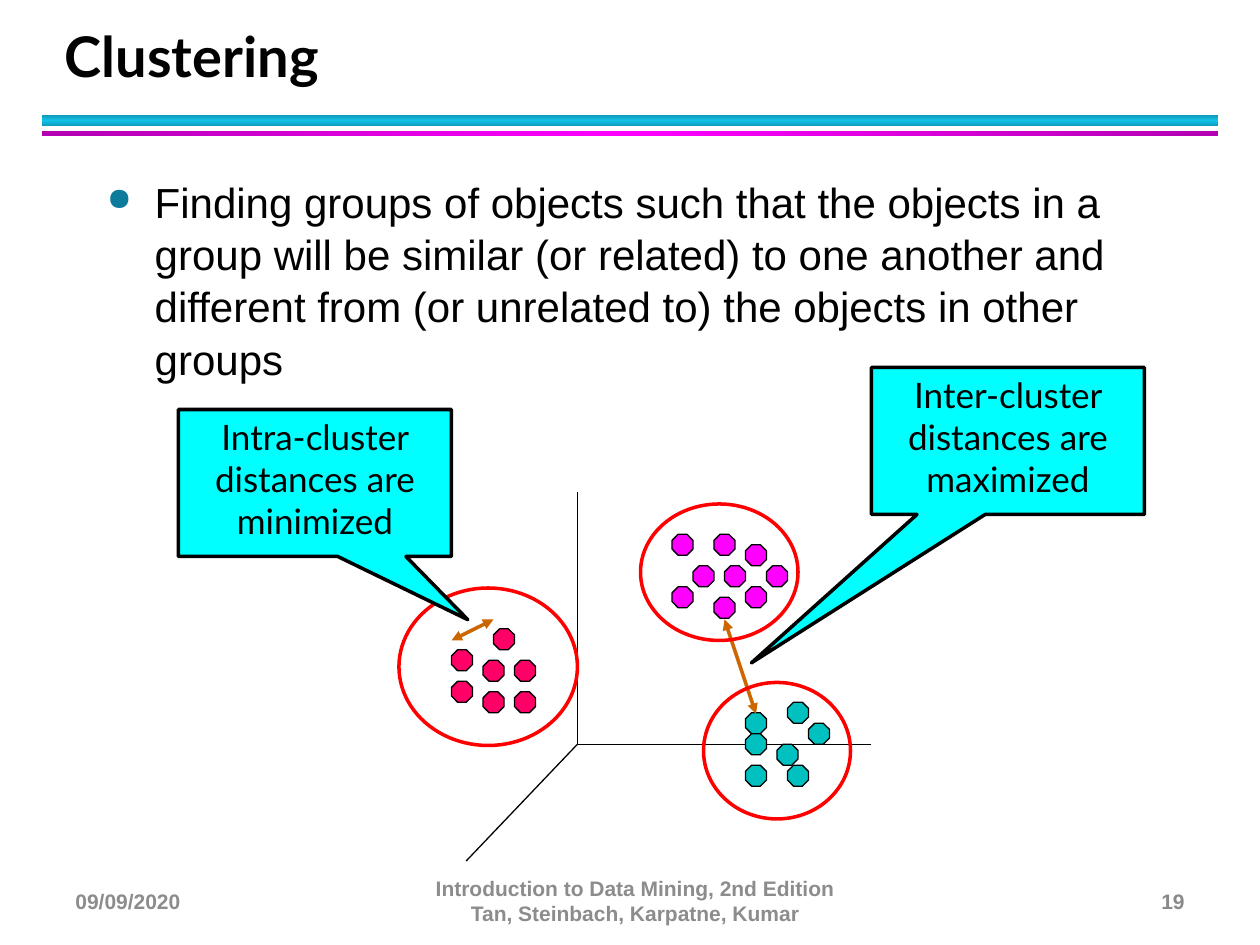
from copy import deepcopy
from dataclasses import dataclass

from lxml import etree
from pptx import Presentation
from pptx import util as u
from pptx.dml.color import RGBColor
from pptx.enum import shapes, text
from pptx.oxml.ns import qn

COLUMNS, ROWS = 120, 90
WIDTH, HEIGHT = u.Inches(10), u.Inches(7.5)
PLOT_SHIFT = -0.12  # rows by which the axes and dots sit above the grid


@dataclass(frozen=True)
class Theme:
    heading: str = "Lato"
    body: str = "Arial"
    title_size: int = 32
    body_size: int = 24
    callout_size: int = 20
    footer_size: int = 12
    ink: str = "000000"
    date_grey: str = "8C8C8C"
    number_grey: str = "898989"
    bullet: str = "0C7B9C"
    callout: str = "00FFFF"
    ring: str = "FF0000"
    arrow: str = "CC6600"
    cyan_bar: tuple = ("0E9BBA", "12C2E9")
    magenta_bar: tuple = ("B200B2", "FF00FF")
    clusters: tuple = ("FF00FF", "FF0066", "00C0C0")
    thin: float = 0.75
    thick: float = 2


THEME = Theme()

# Top-left grid cells of the dots, one list for each cluster
CLUSTER_DOTS = (
    [(64, 51), (68, 51), (71, 52), (66, 54), (69, 54), (73, 54),
     (64, 56), (71, 56), (68, 57)],
    [(47, 60), (43, 62), (46, 63), (49, 63), (43, 65), (46, 66), (49, 66)],
    [(71, 68), (75, 67), (77, 69), (71, 70), (74, 71), (71, 73), (75, 73)],
)
RINGS = [(38, 56, 17, 15), (61, 48, 15, 13), (67, 65, 14, 13)]


def across(columns):
    return round(WIDTH * columns / COLUMNS)


def down(rows):
    return round(HEIGHT * rows / ROWS)


def place(cell):
    left, top, width, height = cell
    return across(left), down(top), across(width), down(height)


def color(value):
    return RGBColor.from_string(value)


def assign(target, **values):
    for name, value in values.items():
        setattr(target, name, value)


def write(frame, words, font, size, ink=THEME.ink, bold=False, **layout):
    """Fill a text frame with one paragraph and return that paragraph."""
    assign(frame, word_wrap=True, **layout)
    para = frame.paragraphs[0]
    para.text = words
    for span in para.runs:
        assign(span.font, name=font, size=u.Pt(size), bold=bold)
        span.font.color.rgb = color(ink)
    return para


def add_text(page, cell, words, font, size, **style):
    box = page.shapes.add_textbox(*place(cell))
    return write(box.text_frame, words, font, size, **style)


def add_shape(page, kind, cell, fill=None, line=None, weight=THEME.thin):
    shape = page.shapes.add_shape(kind, *place(cell))
    shape.shadow.inherit = False
    if fill:
        shape.fill.solid()
        shape.fill.fore_color.rgb = color(fill)
    else:
        shape.fill.background()
    if line:
        shape.line.color.rgb = color(line)
        shape.line.width = u.Pt(weight)
    else:
        shape.line.fill.background()
    return shape


def add_bar(page, cell, edge, middle, angle):
    """Draw a bar shaded from edge to middle and back to edge."""
    bar = add_shape(page, shapes.MSO_SHAPE.RECTANGLE, cell)
    bar.fill.gradient()
    bar.fill.gradient_angle = angle
    for stop, value, position in zip(bar.fill.gradient_stops, (edge, middle), (0, 0.5)):
        stop.color.rgb = color(value)
        stop.position = position
    stops = next(bar._element.iter(qn("a:gsLst")))
    last = deepcopy(stops[0])
    last.set("pos", "100000")
    stops.append(last)


def add_line(page, start, end, ink, weight, arrows=False):
    line = page.shapes.add_connector(
        shapes.MSO_CONNECTOR.STRAIGHT,
        across(start[0]), down(start[1]), across(end[0]), down(end[1]))
    line.line.color.rgb = color(ink)
    line.line.width = u.Pt(weight)
    if arrows:
        outline = line.line._get_or_add_ln()
        for tag in ("a:headEnd", "a:tailEnd"):
            etree.SubElement(outline, qn(tag), type="triangle")
    etree.SubElement(line._element.spPr, qn("a:effectLst"))


def add_callout(page, cell, words, tip):
    callout = add_shape(page, shapes.MSO_SHAPE.RECTANGULAR_CALLOUT, cell,
                        THEME.callout, THEME.ink, THEME.thick)
    for index, value in enumerate(tip):
        callout.adjustments[index] = value
    para = write(callout.text_frame, words, THEME.heading, THEME.callout_size,
                 vertical_anchor=text.MSO_ANCHOR.TOP)
    para.alignment = text.PP_ALIGN.CENTER


def add_bullet(para):
    props = para._p.get_or_add_pPr()
    indent = u.Inches(0.38)
    props.set("marL", str(indent))
    props.set("indent", str(-indent))
    tint = etree.SubElement(props, qn("a:buClr"))
    etree.SubElement(tint, qn("a:srgbClr"), val=THEME.bullet)
    etree.SubElement(props, qn("a:buSzPct"), val="75000")
    etree.SubElement(props, qn("a:buChar"), char="●")


def add_header(page):
    add_bar(page, (4, 11, 112, 1), *THEME.cyan_bar, angle=90)
    add_bar(page, (4, 12.5, 112, 0.5), *THEME.magenta_bar, angle=0)
    title = add_text(page, (5, 2, 108.7, 7), "Clustering", THEME.heading,
                     THEME.title_size, bold=True,
                     vertical_anchor=text.MSO_ANCHOR.BOTTOM)
    title.line_spacing = u.Pt(36)


def add_definition(page):
    para = add_text(
        page, (9, 16, 102, 29),
        "Finding groups of objects such that the objects in a group will be "
        "similar (or related) to one another and different from (or unrelated "
        "to) the objects in other groups", THEME.body, THEME.body_size)
    add_bullet(para)
    assign(para, space_after=u.Pt(4), line_spacing=1.04)


def add_plot(page):
    origin = (55, 71 + PLOT_SHIFT)
    for end in ((55, 47 + PLOT_SHIFT), (83, origin[1]), (44.4, 82)):
        add_line(page, origin, end, THEME.ink, THEME.thin)
    for dots, fill in zip(CLUSTER_DOTS, THEME.clusters):
        for column, row in dots:
            add_shape(page, shapes.MSO_SHAPE.OCTAGON,
                      (column, row + PLOT_SHIFT, 2, 2), fill, THEME.ink)
    add_line(page, (72, 68), (69, 59), THEME.arrow, THEME.thick, arrows=True)
    add_callout(page, (83, 35, 26, 14), "Inter-cluster distances are maximized",
                (-0.94, 1.51))
    for ring in RINGS:
        add_shape(page, shapes.MSO_SHAPE.OVAL, ring, line=THEME.ring,
                  weight=THEME.thick)
    add_line(page, (43, 61), (47, 59), THEME.arrow, THEME.thick, arrows=True)
    add_callout(page, (17, 39, 26, 14), "Intra-cluster distances are minimized",
                (0.56, 0.93))


def add_footer(page):
    align = text.PP_ALIGN
    for left, width, words, ink, side in (
        (86, 28, "19", THEME.number_grey, align.RIGHT),
        (40, 41, "Introduction to Data Mining, 2nd Edition\v"
                 "Tan, Steinbach, Karpatne, Kumar", THEME.date_grey, align.CENTER),
        (6, 28, "09/09/2020", THEME.date_grey, align.LEFT),
    ):
        para = add_text(page, (left, 83.4, width, 4.8), words, THEME.body,
                        THEME.footer_size, ink=ink, bold=True,
                        vertical_anchor=text.MSO_ANCHOR.MIDDLE)
        para.alignment = side


def main():
    deck = Presentation()
    assign(deck, slide_width=WIDTH, slide_height=HEIGHT)
    page = deck.slides.add_slide(deck.slide_layouts[6])
    add_header(page)
    add_definition(page)
    add_plot(page)
    add_footer(page)
    deck.save("out.pptx")


if __name__ == "__main__":
    main()
